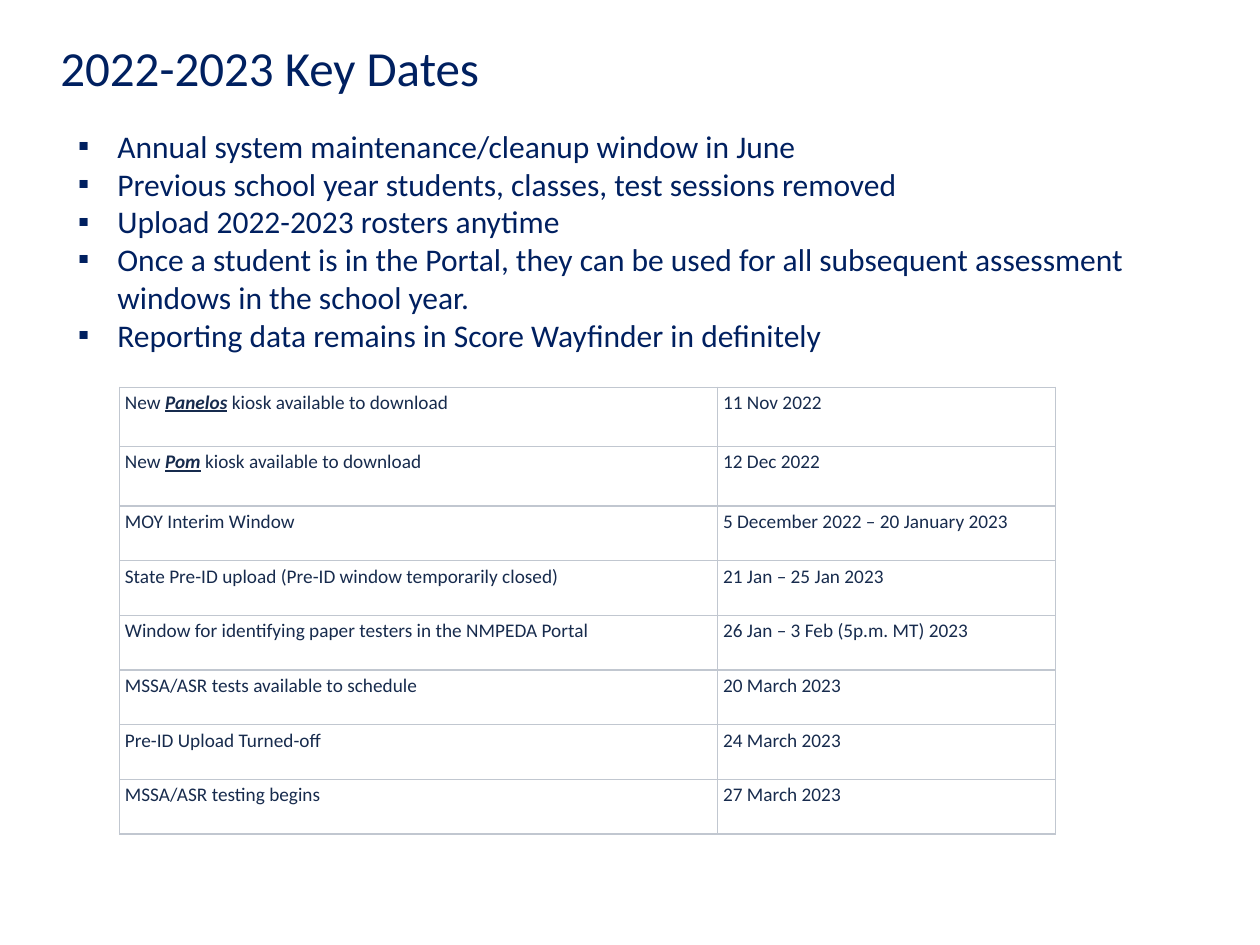
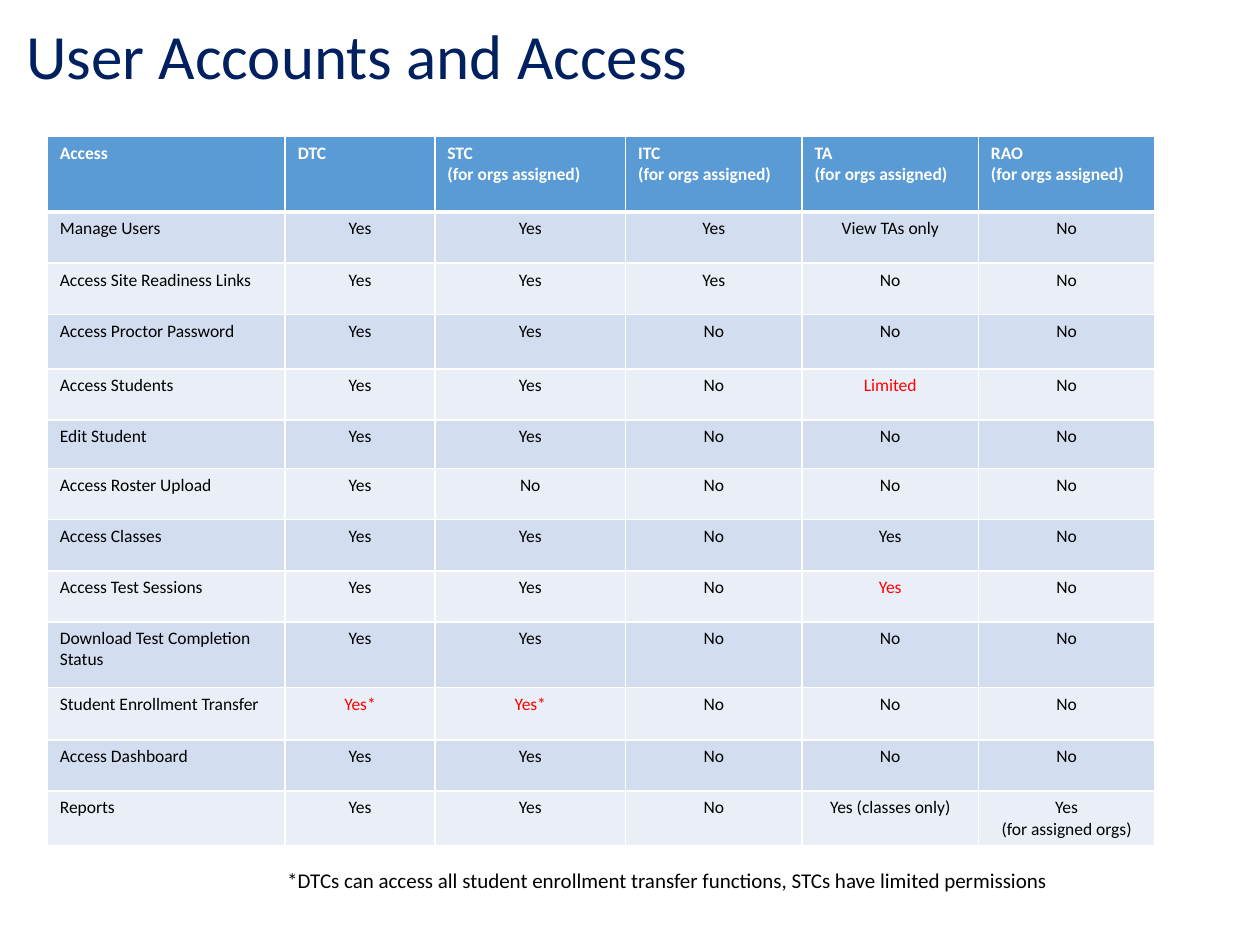
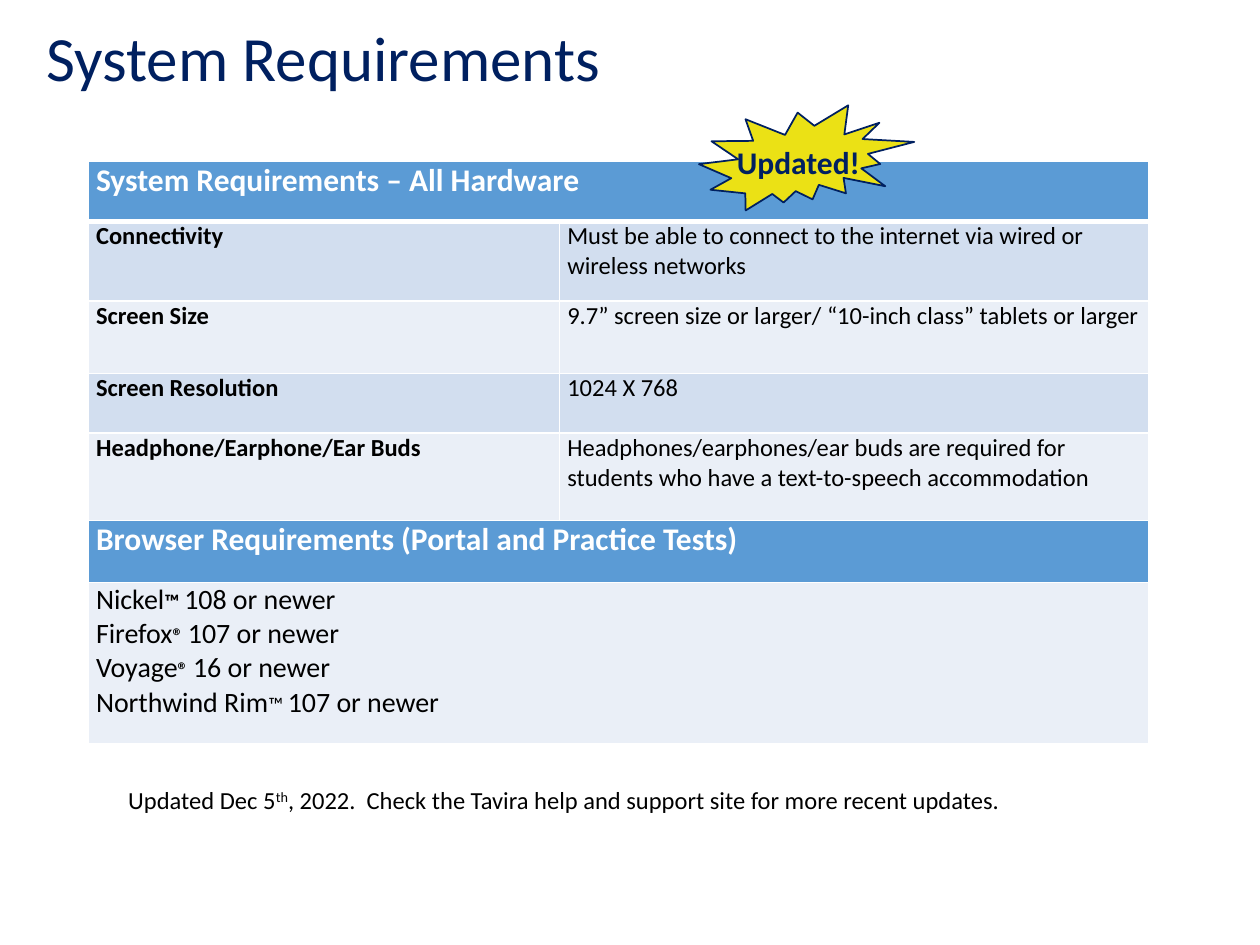
from dataclasses import dataclass, replace
from typing import List, NamedTuple, Optional, Sequence, Union

from lxml import etree
from pptx import Presentation
from pptx.dml.color import RGBColor
from pptx.enum.shapes import MSO_SHAPE
from pptx.enum.text import MSO_AUTO_SIZE, PP_ALIGN
from pptx.oxml.ns import qn
from pptx.util import Pt

STAR = MSO_SHAPE.EXPLOSION2
FIT_SHAPE = MSO_AUTO_SIZE.SHAPE_TO_FIT_TEXT
LEFT, CENTER = PP_ALIGN.LEFT, PP_ALIGN.CENTER

FONT = "Calibri"
NAVY, SLATE, BLACK, WHITE, RED = "002060", "172B4D", "000000", "FFFFFF", "FF0000"
HEADER_BLUE, BAND_DARK, BAND_LIGHT = "5B9BD5", "D2DEEF", "EAEFF7"
GRID_GREY, YELLOW = "C1C7D0", "EBE115"


class Box(NamedTuple):
    """Position and size in points."""
    left: float
    top: float
    width: float
    height: float


@dataclass(frozen=True)
class Style:
    """Look of a piece of text."""
    size: float
    color: str = BLACK
    bold: bool = False
    align: PP_ALIGN = LEFT


@dataclass(frozen=True)
class Span:
    """Stretch of text with its departures from the surrounding style."""
    text: str
    size: Optional[float] = None
    color: Optional[str] = None
    bold: Optional[bool] = None
    emphasis: bool = False
    superscript: bool = False


Content = Union[str, List[List[Span]]]


@dataclass(frozen=True)
class CellLook:
    """Fill, text style and horizontal border widths of a cell."""
    fill: str
    style: Style
    top: float = 1
    bottom: float = 1


@dataclass(frozen=True)
class Grid:
    """Geometry, insets and border colour of a table."""
    left: float
    top: float
    columns: Sequence[float]
    rows: Sequence[float]
    inset_x: float
    inset_y: float
    border: str


HEADER_STYLE = Style(10, WHITE, bold=True)
BODY_STYLE = Style(10)
SECTION_STYLE = Style(18, WHITE, bold=True)
REQUIREMENT_STYLE = Style(14)
BROWSER_STYLE = Style(16)

BULLETS = (
    "Annual system maintenance/cleanup window in June",
    "Previous school year students, classes, test sessions removed",
    "Upload 2022-2023 rosters anytime",
    "Once a student is in the Portal, they can be used for all subsequent "
    "assessment windows in the school year.",
    "Reporting data remains in Score Wayfinder in definitely",
)


def kiosk(system: str) -> Content:
    """Return the kiosk line for an operating system."""
    return [[Span("New "), Span(system, bold=True, emphasis=True),
             Span(" kiosk available to download")]]


KEY_DATES = (
    (kiosk("Panelos"), "11 Nov 2022"),
    (kiosk("Pom"), "12 Dec 2022"),
    ("MOY Interim Window", "5 December 2022 – 20 January 2023"),
    ("State Pre-ID upload (Pre-ID window temporarily closed)", "21 Jan – 25 Jan 2023"),
    ("Window for identifying paper testers in the NMPEDA Portal",
     "26 Jan – 3 Feb (5p.m. MT) 2023"),
    ("MSSA/ASR tests available to schedule", "20 March 2023"),
    ("Pre-ID Upload Turned-off", "24 March 2023"),
    ("MSSA/ASR testing begins", "27 March 2023"),
)
DATES_GRID = Grid(68.4, 221.2, (341.8, 193), (34, 34) + (31.25,) * 6, 3, 2.25, GRID_GREY)

ASSIGNED = "\n(for orgs assigned)"
LIMITED = [[Span("Limited", color=RED)]]
RED_YES = [[Span("Yes", color=RED)]]
STARRED_YES = [[Span("Yes*", color=RED)]]
ACCESS = (
    ("Access", "DTC", *(role + ASSIGNED for role in ("STC", "ITC", "TA", "RAO"))),
    ("Manage Users", "Yes", "Yes", "Yes", "View TAs only", "No"),
    ("Access Site Readiness Links", "Yes", "Yes", "Yes", "No", "No"),
    ("Access Proctor Password", "Yes", "Yes", "No", "No", "No"),
    ("Access Students", "Yes", "Yes", "No", LIMITED, "No"),
    ("Edit Student", "Yes", "Yes", "No", "No", "No"),
    ("Access Roster Upload", "Yes", "No", "No", "No", "No"),
    ("Access Classes", "Yes", "Yes", "No", "Yes", "No"),
    ("Access Test Sessions", "Yes", "Yes", "No", RED_YES, "No"),
    ("Download Test Completion Status", "Yes", "Yes", "No", "No", "No"),
    ("Student Enrollment Transfer", STARRED_YES, STARRED_YES, "No", "No", "No"),
    ("Access Dashboard", "Yes", "Yes", "No", "No", "No"),
    ("Reports", "Yes", "Yes", "No", "Yes (classes only)", "Yes\n(for assigned orgs)"),
)
ACCESS_GRID = Grid(
    27, 78, (136, 85.5, 109, 100.8, 100.8, 100.8),
    (43.2, 29.2, 29.2, 31.2, 29.2, 27.8, 29.2, 29.2, 29.2, 37.5, 30, 29.2, 30),
    7.2, 3.6, WHITE)


def browser(name: str, mark: str, version: str, bold_mark: bool = True) -> List[Span]:
    """Return the line for a browser with its small trademark sign."""
    return [Span(name), Span(f"{mark} ", size=12, bold=bold_mark),
            Span(f"{version} or newer")]


REQUIREMENTS = (
    ("System Requirements – All Hardware",),
    ("Connectivity",
     "Must be able to connect to the internet via wired or wireless networks"),
    ("Screen Size", "9.7” screen size or larger/ “10-inch class” tablets or larger"),
    ("Screen Resolution", "1024 X 768"),
    ("Headphone/Earphone/Ear Buds",
     "Headphones/earphones/ear buds are required for students who have a "
     "text-to-speech accommodation"),
    ("Browser Requirements (Portal and Practice Tests)",),
    ([browser("Nickel", "™", "108"), browser("Firefox", "®", "107"),
      browser("Voyage", "®", "16"),
      browser("Northwind Rim", "™", "107", bold_mark=False)],),
)
REQUIREMENTS_GRID = Grid(50.4, 92, (269.3, 337), (34.5, 45.5, 41.5, 34, 50, 35.5, 92),
                         4.5, 0, WHITE)
BROWSER_HEADER_ROW = 5


def rgb(value: str) -> RGBColor:
    """Convert a hex string to a colour."""
    return RGBColor.from_string(value)


def format_run(run, style: Style, span: Span) -> None:
    """Apply a style and the departures of a span to a run."""
    font = run.font
    font.name = FONT
    font.size = Pt(span.size or style.size)
    font.bold = style.bold if span.bold is None else span.bold
    font.color.rgb = rgb(span.color or style.color)
    if span.emphasis:
        font.italic = font.underline = True
    if span.superscript:
        run._r.get_or_add_rPr().set("baseline", "30000")


def write(text_frame, content: Content, style: Style) -> None:
    """Fill a text frame with styled paragraphs."""
    if isinstance(content, str):
        content = [[Span(line)] for line in content.split("\n")]
    text_frame.text = "\n".join(spans[0].text for spans in content)
    for paragraph, spans in zip(text_frame.paragraphs, content):
        paragraph.alignment = style.align
        for span in spans[1:]:
            paragraph.add_run().text = span.text
        for run, span in zip(paragraph.runs, spans):
            format_run(run, style, span)


def add_text(shapes, box: Box, content: Content, style: Style, wrap: bool = True):
    """Add a text box and return its text frame."""
    text_frame = shapes.add_textbox(*map(Pt, box)).text_frame
    text_frame.word_wrap = wrap
    text_frame.auto_size = FIT_SHAPE
    write(text_frame, content, style)
    return text_frame


def add_titled_slide(presentation, title: str, box: Box, size: float = 36):
    """Add a blank slide with a title."""
    slide = presentation.slides.add_slide(presentation.slide_layouts[6])
    add_text(slide.shapes, box, title, Style(size, NAVY))
    return slide


def add_bullet(paragraph) -> None:
    """Give a paragraph a hanging square bullet."""
    properties = paragraph._p.get_or_add_pPr()
    properties.set("marL", str(Pt(22.5)))
    properties.set("indent", str(-Pt(22.5)))
    etree.SubElement(properties, qn("a:buFont")).set("typeface", FONT)
    etree.SubElement(properties, qn("a:buChar")).set("char", "▪")


def set_borders(cell, color: str, top: float, bottom: float, side: float) -> None:
    """Draw the four borders of a cell."""
    properties = cell._tc.get_or_add_tcPr()
    widths = {"lnL": side, "lnR": side, "lnT": top, "lnB": bottom}
    for position, (name, width) in enumerate(widths.items()):
        line = etree.Element(qn(f"a:{name}"), w=str(Pt(width)))
        fill = etree.SubElement(line, qn("a:solidFill"))
        etree.SubElement(fill, qn("a:srgbClr")).set("val", color)
        properties.insert(position, line)


def add_grid(slide, grid: Grid, content: Sequence[Sequence[Content]], look) -> None:
    """Add a table, merging rows that hold a single cell."""
    frame = slide.shapes.add_table(
        len(grid.rows), len(grid.columns), Pt(grid.left), Pt(grid.top),
        Pt(sum(grid.columns)), Pt(sum(grid.rows)))
    table = frame.table
    table.first_row = table.horz_banding = False
    for column, width in zip(table.columns, grid.columns):
        column.width = Pt(width)
    for row_index, values in enumerate(content):
        table.rows[row_index].height = Pt(grid.rows[row_index])
        if len(values) == 1:
            table.cell(row_index, 0).merge(table.cell(row_index, len(grid.columns) - 1))
        for column_index in range(len(grid.columns)):
            cell = table.cell(row_index, column_index)
            cell_look = look(row_index, column_index)
            cell.margin_left = cell.margin_right = Pt(grid.inset_x)
            cell.margin_top = cell.margin_bottom = Pt(grid.inset_y)
            cell.fill.solid()
            cell.fill.fore_color.rgb = rgb(cell_look.fill)
            side = min(cell_look.top, cell_look.bottom)
            set_borders(cell, grid.border, cell_look.top, cell_look.bottom, side)
            if column_index < len(values):
                write(cell.text_frame, values[column_index], cell_look.style)


def dates_look(row: int, column: int) -> CellLook:
    """Return the look of a key date cell."""
    return CellLook(WHITE, Style(11, SLATE), 0.75, 0.75)


def banded_look(row: int, style: Style) -> CellLook:
    """Return the look of a cell in a banded table with a heavy header rule."""
    if row == 0:
        return CellLook(HEADER_BLUE, style, bottom=3)
    return CellLook(BAND_DARK if row % 2 else BAND_LIGHT, style, top=3 if row == 1 else 1)


def access_look(row: int, column: int) -> CellLook:
    """Return the look of an access cell."""
    if row == 0:
        return banded_look(row, HEADER_STYLE)
    return banded_look(row, replace(BODY_STYLE, align=CENTER if column else LEFT))


def requirements_look(row: int, column: int) -> CellLook:
    """Return the look of a requirements cell."""
    if row == BROWSER_HEADER_ROW:
        return CellLook(HEADER_BLUE, SECTION_STYLE)
    if row == 0:
        return banded_look(row, SECTION_STYLE)
    if row > BROWSER_HEADER_ROW:
        return banded_look(row, BROWSER_STYLE)
    return banded_look(row, replace(REQUIREMENT_STYLE, bold=column == 0))


def build_key_dates(presentation) -> None:
    """Build the key dates slide."""
    slide = add_titled_slide(presentation, "2022-2023 Key Dates",
                             Box(27.4, 18, 674, 41), size=28)
    add_grid(slide, DATES_GRID, KEY_DATES, dates_look)
    text_frame = add_text(slide.shapes, Box(37.5, 69, 654.5, 138),
                          "\n".join(BULLETS), Style(18, NAVY))
    for paragraph in text_frame.paragraphs:
        add_bullet(paragraph)


def build_access(presentation) -> None:
    """Build the user access slide."""
    slide = add_titled_slide(presentation, "User Accounts and Access",
                             Box(8, 6, 464, 51))
    add_grid(slide, ACCESS_GRID, ACCESS, access_look)
    add_text(slide.shapes, Box(157, 492.2, 453.5, 21.8),
             "*DTCs can access all student enrollment transfer functions, "
             "STCs have limited permissions", Style(12), wrap=False)


def add_updated_badge(slide) -> None:
    """Add the starburst with its label."""
    shapes = slide.shapes.add_group_shape().shapes
    star = shapes.add_shape(STAR, *map(Pt, Box(399.6, 59.2, 122.4, 62.6)))
    star.rotation = 2.5
    star.shadow.inherit = False
    star.fill.solid()
    star.fill.fore_color.rgb = rgb(YELLOW)
    star.line.color.rgb = rgb(NAVY)
    star.line.width = Pt(1)
    add_text(shapes, Box(414, 78.2, 85.7, 29), "Updated!",
             Style(18, NAVY, bold=True), wrap=False)


def build_requirements(presentation) -> None:
    """Build the system requirements slide."""
    slide = add_titled_slide(presentation, "System Requirements",
                             Box(19.5, 7.2, 552, 51))
    add_grid(slide, REQUIREMENTS_GRID, REQUIREMENTS, requirements_look)
    add_updated_badge(slide)
    note = [[Span("Updated Dec 5"), Span("th", superscript=True),
             Span(", 2022.  Check the Tavira help and support site "
                  "for more recent updates.")]]
    add_text(slide.shapes, Box(66.2, 445, 527, 24.5), note, Style(14), wrap=False)


def main() -> None:
    """Build and save the presentation."""
    presentation = Presentation()
    presentation.slide_width, presentation.slide_height = Pt(720), Pt(540)
    build_key_dates(presentation)
    build_access(presentation)
    build_requirements(presentation)
    presentation.save("out.pptx")


if __name__ == "__main__":
    main()
